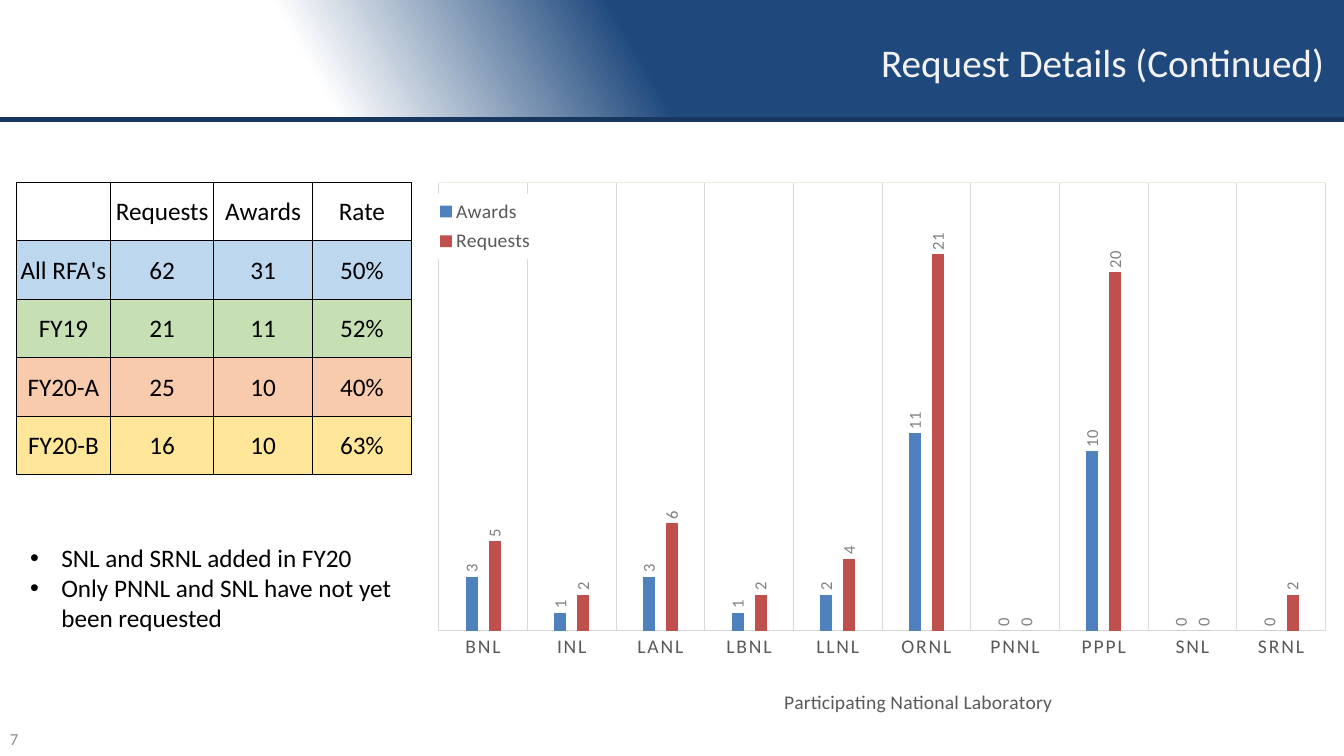
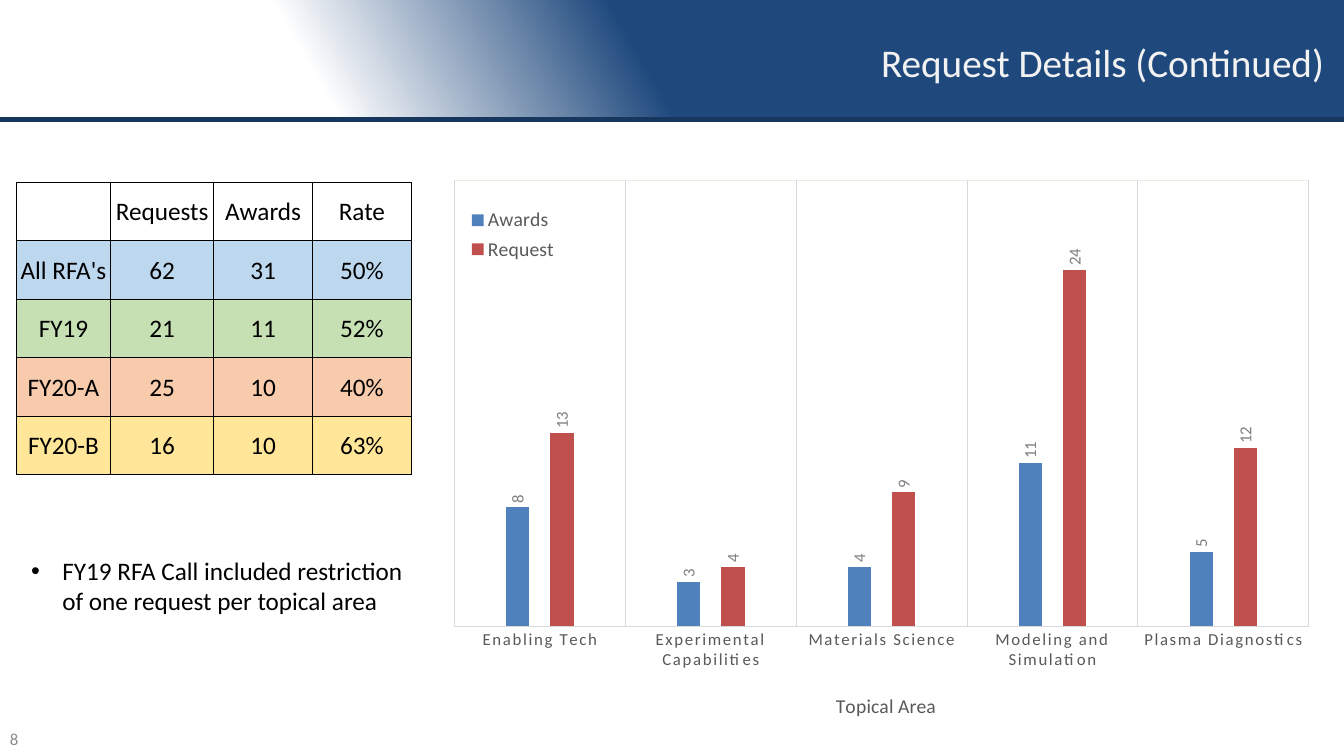
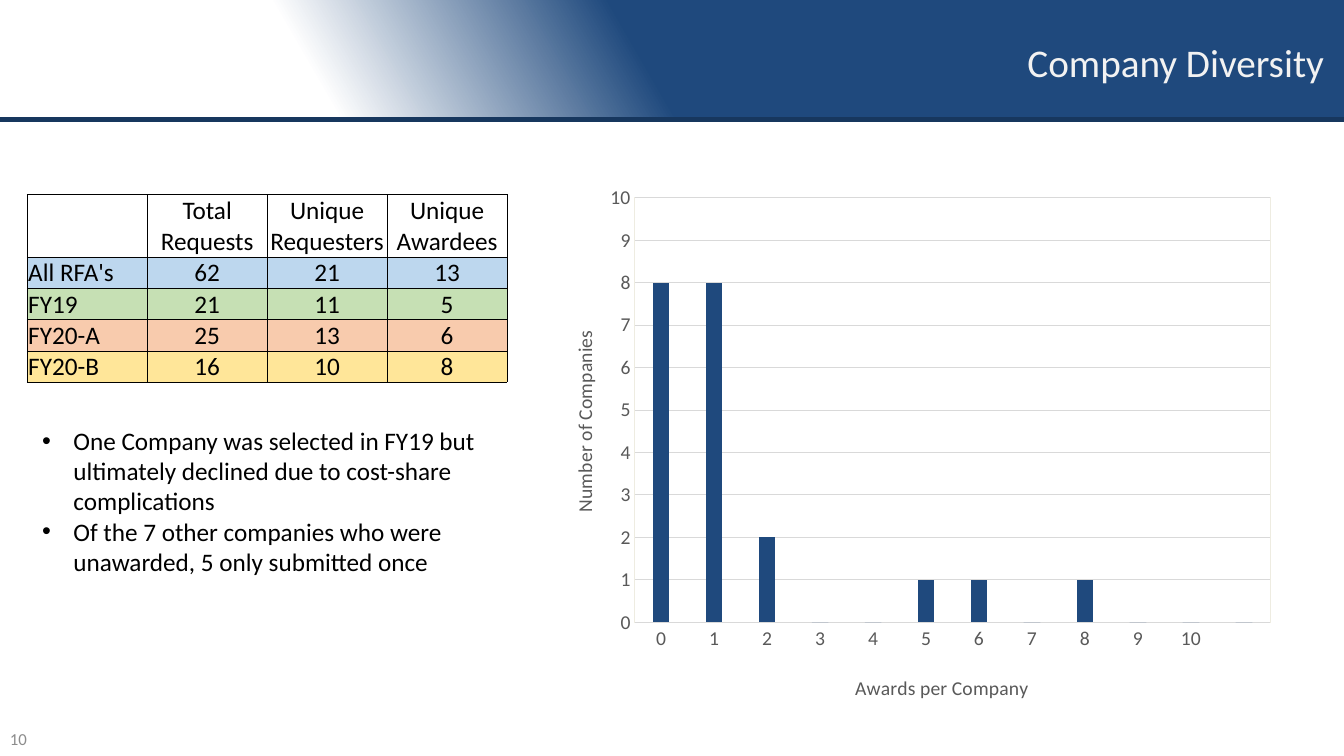
"""Build three slides of request and award figures, each with a table, bullets and a chart."""
from dataclasses import dataclass, field
from typing import Any, Optional

import lxml.etree
import pptx
import pptx.chart.data
import pptx.dml.color
import pptx.enum.chart
import pptx.enum.shapes
import pptx.enum.text
import pptx.oxml
import pptx.oxml.ns
import pptx.util

Inches = pptx.util.Inches
Pt = pptx.util.Pt
Align = pptx.enum.text.PP_ALIGN
Anchor = pptx.enum.text.MSO_ANCHOR
Box = tuple[float, float, float, float]
SPACES = pptx.oxml.ns.nsdecls("a", "c")


@dataclass(frozen=True)
class Theme:
    font: str = "Calibri"
    navy: str = "1F497D"
    rule: str = "17375E"
    white: str = "FFFFFF"
    black: str = "000000"
    title: str = "F2F2F2"
    page: str = "8C8C8C"
    label: str = "808080"
    axis: str = "595959"
    grid: str = "D9D9D9"
    frame: str = "EEECE1"
    blue: str = "4F81BD"
    red: str = "C0504D"
    tints: tuple[str, ...] = ("BDD7EE", "C6E0B4", "F8CBAD", "FFE699")
    head: int = 28
    body: int = 18
    note: int = 14
    small: int = 12


THEME = Theme()


@dataclass(frozen=True)
class Grid:
    left: float
    top: float
    cols: tuple[float, ...]
    rows: tuple[float, ...]
    edge: float
    anchor: Any
    first: Any
    cells: tuple[tuple[str, ...], ...]


@dataclass(frozen=True)
class Series:
    name: str
    vals: tuple[int, ...]
    color: str


@dataclass(frozen=True)
class Graph:
    box: Box
    cats: tuple[str, ...]
    series: tuple[Series, ...]
    top: int
    gap: int
    lap: int
    plot: Box
    title: str
    spot: tuple[float, float]
    size: int = THEME.note
    key: Optional[Box] = None
    side: str = ""
    edge: tuple[float, float] = (0, 0)


@dataclass(frozen=True)
class Page:
    title: str
    number: int
    grid: Grid
    graph: Graph
    box: Box
    notes: tuple[str, ...] = field(default=())


def tint(code: str) -> pptx.dml.color.RGBColor:
    return pptx.dml.color.RGBColor.from_string(code)


def style(font: Any, size: int, color: str) -> None:
    font.name = THEME.font
    font.size = Pt(size)
    font.bold = False
    font.color.rgb = tint(color)


def stroke(line: Any, color: str, width: float) -> None:
    line.color.rgb = tint(color)
    line.width = Pt(width)


def write(slide: Any, box: Box, text: str, size: int, color: str,
          anchor: Any = Anchor.TOP, align: Any = Align.LEFT, dots: bool = False) -> None:
    shape = slide.shapes.add_textbox(*map(Inches, box))
    frame = shape.text_frame
    frame.word_wrap = True
    frame.vertical_anchor = anchor
    frame.text = text
    for par in frame.paragraphs:
        par.alignment = align
        if dots:
            props = par._p.get_or_add_pPr()
            props.set("marL", str(Inches(0.31)))
            props.set("indent", str(Inches(-0.31)))
            props.append(pptx.oxml.parse_xml(f'<a:buFont {SPACES} typeface="Arial"/>'))
            props.append(pptx.oxml.parse_xml(f'<a:buChar {SPACES} char="•"/>'))
        for run in par.runs:
            style(run.font, size, color)


def banner(slide: Any) -> None:
    band = slide.shapes.add_shape(pptx.enum.shapes.MSO_SHAPE.RECTANGLE,
                                  0, 0, Inches(13.33), Inches(1.18))
    band.shadow.inherit = False
    band.line.fill.background()
    band.fill.gradient()
    band.fill.gradient_angle = 30
    stops = ((0.24, THEME.white), (0.48, THEME.navy))
    for stop, (place, color) in zip(band.fill.gradient_stops, stops):
        stop.position = place
        stop.color.rgb = tint(color)
    rule = slide.shapes.add_connector(pptx.enum.shapes.MSO_CONNECTOR.STRAIGHT,
                                      0, Inches(1.19), Inches(13.33), Inches(1.19))
    stroke(rule.line, THEME.rule, 3.5)
    lxml.etree.SubElement(rule._element.spPr, pptx.oxml.ns.qn("a:effectLst"))


def border(cell: Any, width: float) -> None:
    props = cell._tc.get_or_add_tcPr()
    for side in "LRTB":
        props.append(pptx.oxml.parse_xml(
            f'<a:ln{side} {SPACES} w="{Pt(width)}"><a:solidFill>'
            f'<a:srgbClr val="{THEME.black}"/></a:solidFill></a:ln{side}>'))


def table(slide: Any, grid: Grid) -> None:
    shape = slide.shapes.add_table(
        len(grid.rows), len(grid.cols), Inches(grid.left), Inches(grid.top),
        Inches(sum(grid.cols)), Inches(sum(grid.rows)))
    body = shape.table
    body.first_row = body.horz_banding = False
    for col, width in zip(body.columns, grid.cols):
        col.width = Inches(width)
    for row, high in zip(body.rows, grid.rows):
        row.height = Inches(high)
    for down, texts in enumerate(grid.cells):
        for across, text in enumerate(texts):
            cell = body.cell(down, across)
            cell.margin_left = cell.margin_right = cell.margin_top = Inches(0.01)
            cell.margin_bottom = 0
            cell.vertical_anchor = grid.anchor
            border(cell, grid.edge)
            if down:
                cell.fill.solid()
                cell.fill.fore_color.rgb = tint(THEME.tints[down - 1])
            else:
                cell.fill.background()
            cell.text_frame.text = text
            par = cell.text_frame.paragraphs[0]
            par.alignment = Align.CENTER if across else grid.first
            for run in par.runs:
                style(run.font, THEME.body, THEME.black)


def place(host: Any, index: int, spot: tuple[float, ...], inner: bool = False) -> None:
    for old in host.findall(pptx.oxml.ns.qn("c:layout")):
        host.remove(old)
    names = "xywh"[:len(spot)]
    parts = '<c:layoutTarget val="inner"/>' if inner else ""
    parts += "".join(f'<c:{name}Mode val="edge"/>' for name in names[:2])
    parts += "".join(f'<c:{name} val="{val}"/>' for name, val in zip(names, spot))
    host.insert(index, pptx.oxml.parse_xml(
        f"<c:layout {SPACES}><c:manualLayout>{parts}</c:manualLayout></c:layout>"))


def caption(axis: Any, text: str, spot: tuple[float, float], turn: int = 0) -> None:
    frame = axis.axis_title.text_frame
    frame.text = text
    style(frame.paragraphs[0].runs[0].font, THEME.note, THEME.axis)
    frame._txBody.bodyPr.set("rot", str(turn))
    place(axis.axis_title._element, 1, spot)


def legend(chart: Any, spot: Box) -> None:
    chart.has_legend = True
    key = chart.legend
    key.position = pptx.enum.chart.XL_LEGEND_POSITION.RIGHT
    key.include_in_layout = False
    style(key.font, THEME.note, THEME.axis)
    place(key._element, 1, spot)
    key._element.find(pptx.oxml.ns.qn("c:overlay")).addnext(pptx.oxml.parse_xml(
        f'<c:spPr {SPACES}><a:solidFill><a:srgbClr val="{THEME.white}"/>'
        "</a:solidFill></c:spPr>"))


def axes(chart: Any, graph: Graph) -> None:
    cat, val = chart.category_axis, chart.value_axis
    for axis in (cat, val):
        axis.major_tick_mark = pptx.enum.chart.XL_TICK_MARK.NONE
        axis.minor_tick_mark = pptx.enum.chart.XL_TICK_MARK.NONE
        style(axis.tick_labels.font, graph.size, THEME.axis)
    stroke(cat.format.line, THEME.grid, 0.75)
    caption(cat, graph.title, graph.spot)
    val.minimum_scale = 0
    val.maximum_scale = graph.top
    val.format.line.fill.background()
    val.has_major_gridlines = bool(graph.side)
    cat.has_major_gridlines = not graph.side
    ruled = val if graph.side else cat
    stroke(ruled.major_gridlines.format.line, THEME.grid, 0.75)
    if graph.side:
        val.major_unit = 1
        caption(val, graph.side, graph.edge, -5400000)
    else:
        val.visible = False
        for props in chart.element.xpath("//c:catAx/c:txPr//a:defRPr"):
            props.set("spc", "120")


def draw(slide: Any, graph: Graph) -> None:
    data = pptx.chart.data.CategoryChartData()
    data.categories = graph.cats
    for item in graph.series:
        data.add_series(item.name, item.vals)
    chart = slide.shapes.add_chart(
        pptx.enum.chart.XL_CHART_TYPE.COLUMN_CLUSTERED, *map(Inches, graph.box), data).chart
    chart.has_title = chart.has_legend = False
    style(chart.font, 10, THEME.black)
    plot = chart.plots[0]
    plot.vary_by_categories = False
    plot.gap_width = graph.gap
    plot.overlap = graph.lap
    for bars, item in zip(plot.series, graph.series):
        bars.format.fill.solid()
        bars.format.fill.fore_color.rgb = tint(item.color)
        if graph.key:
            labels = bars.data_labels
            labels.show_value = True
            labels.position = pptx.enum.chart.XL_LABEL_POSITION.OUTSIDE_END
            style(labels.font, THEME.small, THEME.label)
    for frame in chart.element.xpath("//c:dLbls/c:txPr/a:bodyPr"):
        frame.set("rot", "-5400000")
        frame.set("vert", "horz")
    axes(chart, graph)
    if graph.key:
        legend(chart, graph.key)
    area = chart.element.xpath("//c:plotArea")[0]
    place(area, 0, graph.plot, True)
    area.append(pptx.oxml.parse_xml(
        f'<c:spPr {SPACES}><a:noFill/><a:ln w="{Pt(0.75)}"><a:solidFill>'
        f'<a:srgbClr val="{THEME.frame}"/></a:solidFill></a:ln></c:spPr>'))


RATES = Grid(0.16, 1.81, (0.94, 1.02, 0.98, 0.98), (0.58,) * 5, 1,
             Anchor.MIDDLE, Align.CENTER, (
                 ("", "Requests", "Awards", "Rate"),
                 ("All RFA's", "62", "31", "50%"),
                 ("FY19", "21", "11", "52%"),
                 ("FY20-A", "25", "10", "40%"),
                 ("FY20-B", "16", "10", "63%")))

FIRMS = Grid(0.27, 1.93, (1.19,) * 4, (0.62,) + (0.31,) * 4, 0.5,
             Anchor.BOTTOM, Align.LEFT, (
                 ("", "Total Requests", "Unique Requesters", "Unique Awardees"),
                 ("All RFA's", "62", "21", "13"),
                 ("FY19", "21", "11", "5"),
                 ("FY20-A", "25", "13", "6"),
                 ("FY20-B", "16", "10", "8")))

LABS = Graph(
    (4.17, 1.65, 9.16, 5.5),
    ("BNL", "INL", "LANL", "LBNL", "LLNL", "ORNL", "PNNL", "PPPL", "SNL", "SRNL"),
    (Series("Awards", (3, 1, 3, 1, 2, 11, 0, 10, 0, 0), THEME.blue),
     Series("Requests", (5, 2, 6, 2, 4, 21, 0, 20, 0, 2), THEME.red)),
    25, 444, -90, (0.02, 0.03, 0.96, 0.82),
    "Participating National Laboratory", (0.39, 0.95), key=(0.01, 0.05, 0.12, 0.12))

TOPICS = Graph(
    (4.33, 1.62, 8.92, 5.67),
    ("Enabling Tech", "Experimental Capabilities", "Materials Science",
     "Modeling and Simulation", "Plasma Diagnostics"),
    (Series("Awards", (8, 3, 4, 11, 5), THEME.blue),
     Series("Request", (13, 4, 9, 24, 12), THEME.red)),
    30, 444, -90, (0.02, 0.03, 0.95, 0.78),
    "Topical Area", (0.44, 0.92), size=THEME.small, key=(0.03, 0.07, 0.11, 0.11))

COUNTS = Graph(
    (5.33, 1.75, 7.42, 5.33), tuple(map(str, range(11))),
    (Series("Series 1", (8, 8, 2, 0, 0, 1, 1, 0, 1, 0, 0, 0), THEME.navy),),
    10, 219, -27, (0.13, 0.04, 0.85, 0.79),
    "Awards per Company", (0.42, 0.92), side="Number of Companies", edge=(0.04, 0.28))

PAGES = (
    Page("Request Details (Continued)", 7, RATES, LABS, (0.2, 5.33, 3.92, 1.01),
         ("SNL and SRNL added in FY20", "Only PNNL and SNL have not yet been requested")),
    Page("Request Details (Continued)", 8, RATES, TOPICS, (0.21, 5.46, 3.92, 0.71),
         ("FY19 RFA Call included restriction of one request per topical area",)),
    Page("Company Diversity", 10, FIRMS, COUNTS, (0.32, 4.17, 4.99, 1.92),
         ("One Company was selected in FY19 but ultimately declined due to "
          "cost-share complications",
          "Of the 7 other companies who were unawarded, 5 only submitted once")),
)


def build(deck: Any, page: Page) -> None:
    slide = deck.slides.add_slide(deck.slide_layouts[6])
    banner(slide)
    write(slide, (3.67, 0.15, 9.56, 0.92), page.title, THEME.head, THEME.title,
          Anchor.MIDDLE, Align.RIGHT)
    write(slide, (0, 7.08, 3.11, 0.4), str(page.number), THEME.small, THEME.page,
          Anchor.BOTTOM)
    table(slide, page.grid)
    draw(slide, page.graph)
    write(slide, page.box, "\n".join(page.notes), THEME.body, THEME.black, dots=True)


def main() -> None:
    deck = pptx.Presentation()
    deck.slide_width = Inches(13.33)
    deck.slide_height = Inches(7.5)
    for page in PAGES:
        build(deck, page)
    deck.save("out.pptx")


if __name__ == "__main__":
    main()
